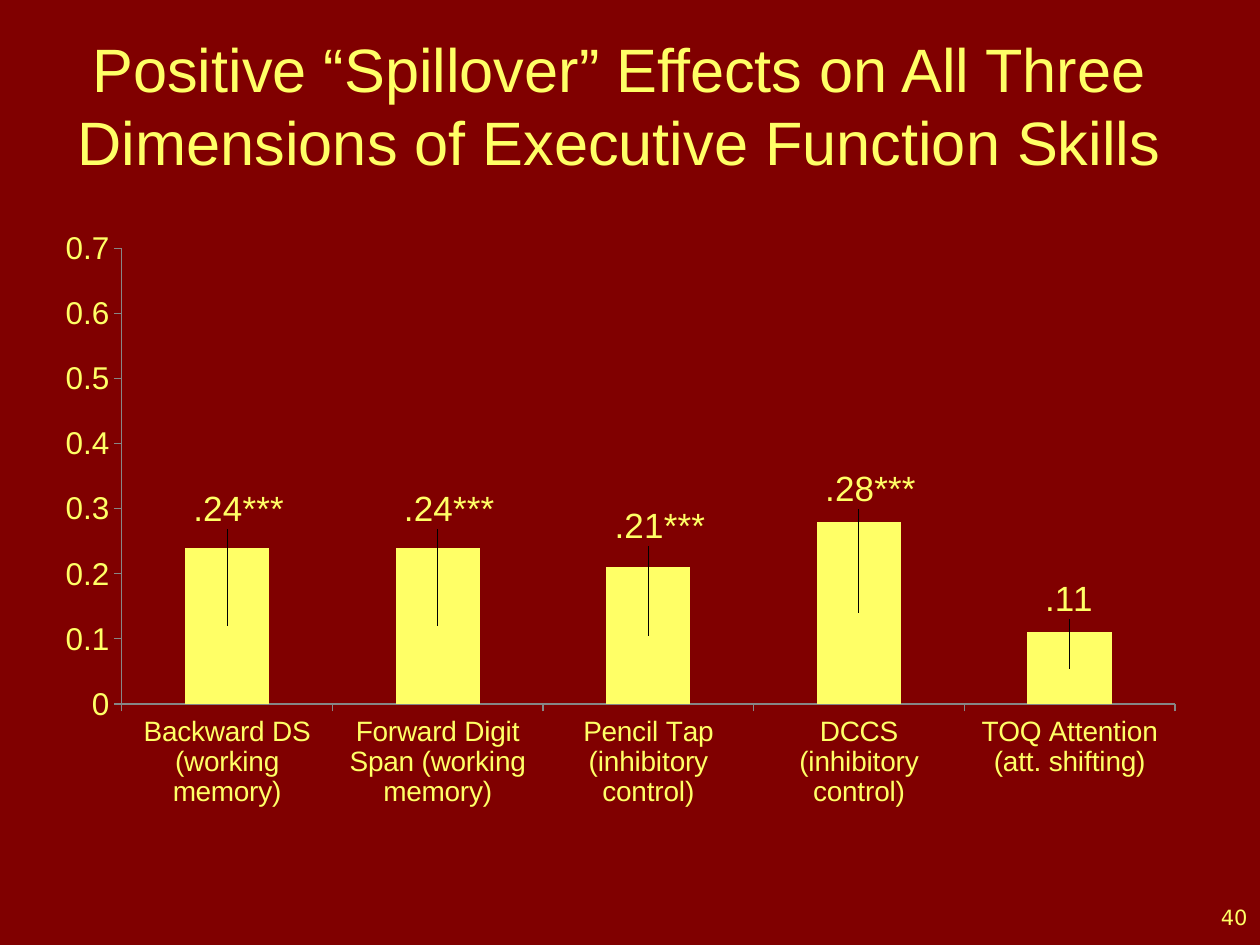
from lxml.etree import SubElement
from pptx import Presentation
from pptx.chart.data import CategoryChartData
from pptx.dml.color import RGBColor
from pptx.enum.chart import XL_CHART_TYPE, XL_TICK_MARK
from pptx.enum.text import MSO_ANCHOR, MSO_AUTO_SIZE, PP_ALIGN
from pptx.oxml.ns import qn
from pptx.util import Cm, Pt

COLORS = {"background": "800000", "accent": "FFFF66", "axis": "868686", "base": "000000"}

# category, effect size, label, label offset (x, y) as a share of the chart
EFFECTS = [
    ("Backward DS (working memory)", 0.24, ".24***", (0.01, -0.17)),
    ("Forward Digit Span (working memory)", 0.24, ".24***", (0.01, -0.17)),
    ("Pencil Tap (inhibitory control)", 0.21, ".21***", (0.01, -0.16)),
    ("DCCS (inhibitory control)", 0.28, ".28***", (0.01, -0.18)),
    ("TOQ Attention (att. shifting)", 0.11, ".11", (0, -0.1)),
]


def manual_layout(parent, position, **settings):
    """Insert a c:manualLayout into parent at the given child position."""
    for old in parent.findall(qn("c:layout")):
        parent.remove(old)
    layout = SubElement(parent, qn("c:layout"))
    manual = SubElement(layout, qn("c:manualLayout"))
    for tag, value in settings.items():
        SubElement(manual, qn(f"c:{tag}")).set("val", str(value))
    parent.insert(position, layout)


class SlideBuilder:
    def __init__(self, slide, font="Arial"):
        self.slide = slide
        self.font = font
        fill = slide.background.fill
        fill.solid()
        fill.fore_color.rgb = self.color("background")

    def color(self, name):
        return RGBColor.from_string(COLORS[name])

    def style(self, font, size, color="accent", name=None):
        font.name = name or self.font
        font.size = Pt(size)
        font.bold = False
        font.color.rgb = self.color(color)

    def title(self, text, left, top, width, height, size):
        title = self.slide.shapes.title
        title.left, title.top, title.width, title.height = left, top, width, height
        frame = title.text_frame
        frame.text = text
        frame.word_wrap = True
        frame.auto_size = MSO_AUTO_SIZE.NONE
        frame.vertical_anchor = MSO_ANCHOR.MIDDLE
        frame.margin_bottom = Cm(0.8)
        paragraph = frame.paragraphs[0]
        paragraph.alignment = PP_ALIGN.CENTER
        self.style(paragraph.runs[0].font, size)

    def page_number(self, text, left, top, width, height):
        frame = self.slide.shapes.add_textbox(left, top, width, height).text_frame
        frame.text = text
        frame.word_wrap = True
        paragraph = frame.paragraphs[0]
        paragraph.alignment = PP_ALIGN.RIGHT
        self.style(paragraph.runs[0].font, 12, name="DejaVu Sans")

    def axis(self, axis, size):
        axis.has_major_gridlines = False
        axis.major_tick_mark = XL_TICK_MARK.OUTSIDE
        axis.minor_tick_mark = XL_TICK_MARK.NONE
        axis.format.line.color.rgb = self.color("axis")
        axis.format.line.width = Pt(0.75)
        self.style(axis.tick_labels.font, size)

    def effect_chart(self, effects, left, top, width, height):
        data = CategoryChartData()
        data.categories = [effect[0] for effect in effects]
        data.add_series("Series 1", [effect[1] for effect in effects])
        chart = self.slide.shapes.add_chart(
            XL_CHART_TYPE.COLUMN_STACKED, left, top, width, height, data).chart
        chart.has_legend = False
        chart.has_title = False
        self.style(chart.font, 10, "base")

        self.axis(chart.category_axis, 16)
        scale = chart.value_axis
        self.axis(scale, 18)
        scale.minimum_scale, scale.maximum_scale, scale.major_unit = 0, 0.7, 0.1

        plot = chart.plots[0]
        plot.gap_width, plot.overlap, plot.vary_by_categories = 150, 100, False
        bars = plot.series[0]
        bars.format.fill.solid()
        bars.format.fill.fore_color.rgb = self.color("accent")
        for index, (_, _, text, offset) in enumerate(effects):
            self.bar_label(bars, index, text, offset)

        plot_area = chart.element.find(f"{qn('c:chart')}/{qn('c:plotArea')}")
        manual_layout(plot_area, 0, layoutTarget="inner", xMode="edge", yMode="edge",
                      x=0.078, y=0.041, w=0.912, h=0.667)

    def bar_label(self, bars, index, text, offset):
        frame = bars.points[index].data_label.text_frame
        frame.text = text
        self.style(frame.paragraphs[0].runs[0].font, 20)
        label = bars.data_labels._element.findall(qn("c:dLbl"))[index]
        manual_layout(label, 1, x=offset[0], y=offset[1])


def main():
    presentation = Presentation()
    presentation.slide_width, presentation.slide_height = Cm(25.4), Cm(19.05)
    builder = SlideBuilder(presentation.slides.add_slide(presentation.slide_layouts[5]))
    builder.title(
        "Positive “Spillover” Effects on All Three Dimensions of Executive Function Skills",
        Cm(1.06), Cm(0.85), Cm(22.86), Cm(3.18), 35)
    builder.effect_chart(EFFECTS, Cm(0.64), Cm(4.45), Cm(23.28), Cm(13.76))
    builder.page_number("40", Cm(19.47), Cm(18.1), Cm(5.93), Cm(1.27))
    presentation.save("out.pptx")


if __name__ == "__main__":
    main()
